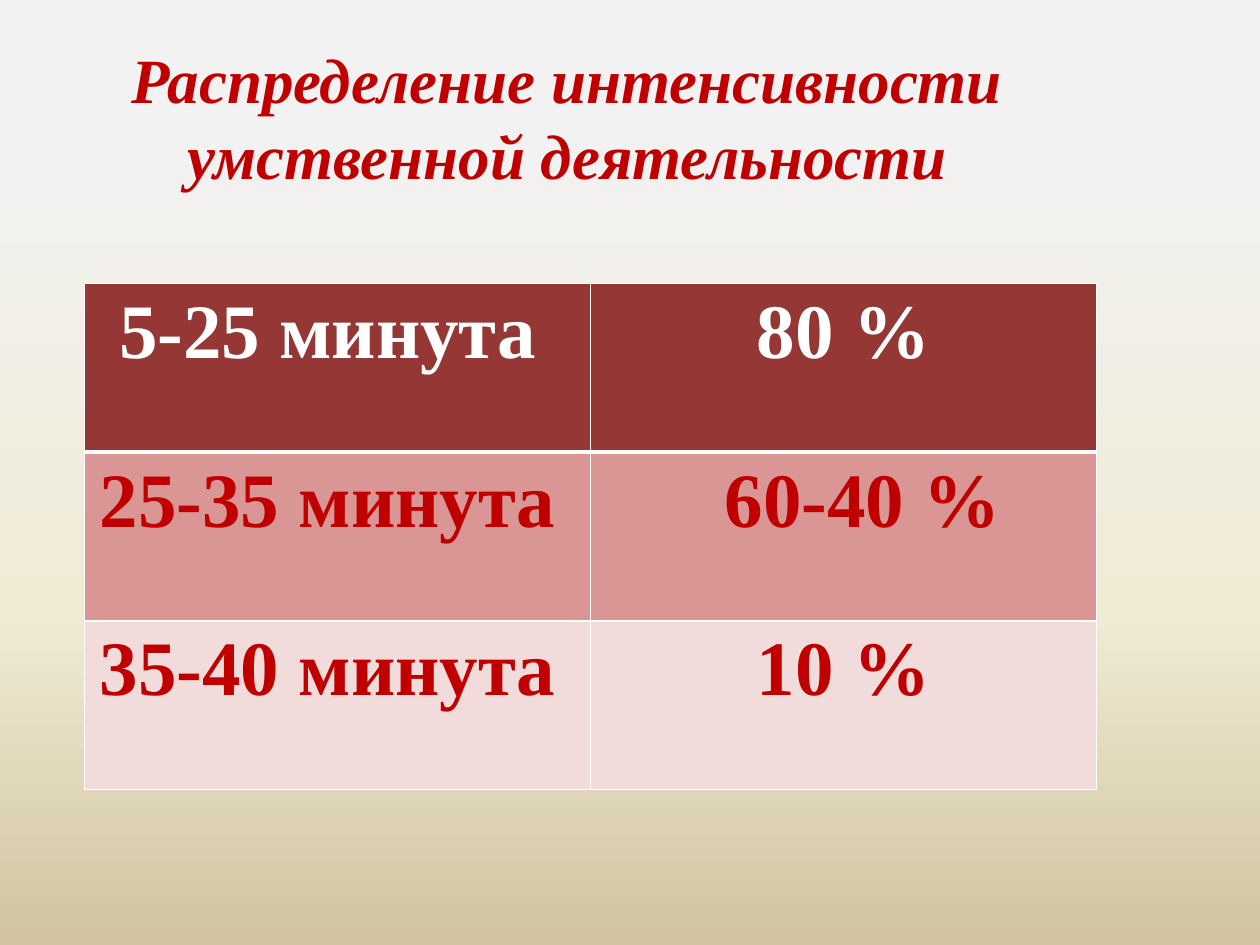
import dataclasses

import lxml.etree
import pptx
import pptx.dml.color
import pptx.enum.text
import pptx.oxml
import pptx.oxml.ns
import pptx.util

Pt = pptx.util.Pt
qn = pptx.oxml.ns.qn
FONT = "Times New Roman"
HUES = {
    "white": "FFFFFF",
    "red": "C00000",
    "head": "953735",
    "rose": "D99694",
    "pale": "F2DCDB",
    "sky": "F2F2F2",
    "cream": "F0EBD5",
    "sand": "D1C39F",
}
STOPS = ((15, "sky"), (65, "cream"), (100, "sand"))
SIDES = ("lnL", "lnR", "lnT", "lnB")


@dataclasses.dataclass
class Row:
    time: str
    share: str
    fill: str
    ink: str
    shift: float = 0


ROWS = [
    Row("5-25 минута ", "80 %", "head", "white"),
    Row("25-35 минута ", "60-40 %", "rose", "red", 22),
    Row("35-40 минута ", "10 %", "pale", "red"),
]


def tint(name: str) -> pptx.dml.color.RGBColor:
    return pptx.dml.color.RGBColor.from_string(HUES[name])


def add_text(frame, text: str, size: float, ink: str, slant: bool = False) -> None:
    para = frame.paragraphs[0]
    para.alignment = pptx.enum.text.PP_ALIGN.CENTER
    run = para.add_run()
    run.text = text
    font = run.font
    font.name = FONT
    font.size = Pt(size)
    font.bold = True
    font.italic = slant
    font.color.rgb = tint(ink)


def add_edge(cell, side: str, width: float, spot: int) -> None:
    props = cell._tc.get_or_add_tcPr()
    line = lxml.etree.Element(qn("a:" + side), w=str(Pt(width)))
    fill = lxml.etree.SubElement(line, qn("a:solidFill"))
    lxml.etree.SubElement(fill, qn("a:srgbClr"), val=HUES["white"])
    props.insert(spot, line)


def fill_back(slide) -> None:
    fill = slide.background.fill
    fill.gradient()
    fill.gradient_angle = 270
    grad = slide.background._cSld.find(".//" + qn("a:gradFill"))
    stops = grad.find(qn("a:gsLst"))
    for stop in list(stops):
        stops.remove(stop)
    for place, name in STOPS:
        stop = lxml.etree.SubElement(stops, qn("a:gs"), pos=str(place * 1000))
        lxml.etree.SubElement(stop, qn("a:srgbClr"), val=HUES[name])


def add_title(slide, text: str) -> None:
    title = slide.shapes.title
    title.left, title.top = Pt(0), Pt(21.6)
    title.width, title.height = Pt(648), Pt(90)
    frame = title.text_frame
    frame.word_wrap = True
    frame.vertical_anchor = pptx.enum.text.MSO_ANCHOR.MIDDLE
    add_text(frame, text, 36, "red", True)


def add_grid(slide, rows: list[Row]) -> None:
    grid = slide.shapes.add_table(
        len(rows), 2, Pt(48.24), Pt(162), Pt(578.4), Pt(289.2)
    ).table
    for r, row in enumerate(rows):
        for c, text in enumerate((row.time, row.share)):
            cell = grid.cell(r, c)
            cell.margin_left = Pt(7.2 + c * row.shift)
            add_text(cell.text_frame, text, 44, row.ink)
            cell.fill.solid()
            cell.fill.fore_color.rgb = tint(row.fill)
            for spot, side in enumerate(SIDES):
                thick = (r, side) in ((0, "lnB"), (1, "lnT"))
                add_edge(cell, side, 3 if thick else 1, spot)


def main() -> None:
    deck = pptx.Presentation()
    deck.slide_width, deck.slide_height = Pt(720), Pt(540)
    slide = deck.slides.add_slide(deck.slide_layouts[5])
    fill_back(slide)
    add_title(slide, "Распределение интенсивности умственной деятельности")
    add_grid(slide, ROWS)
    deck.save("out.pptx")


if __name__ == "__main__":
    main()
